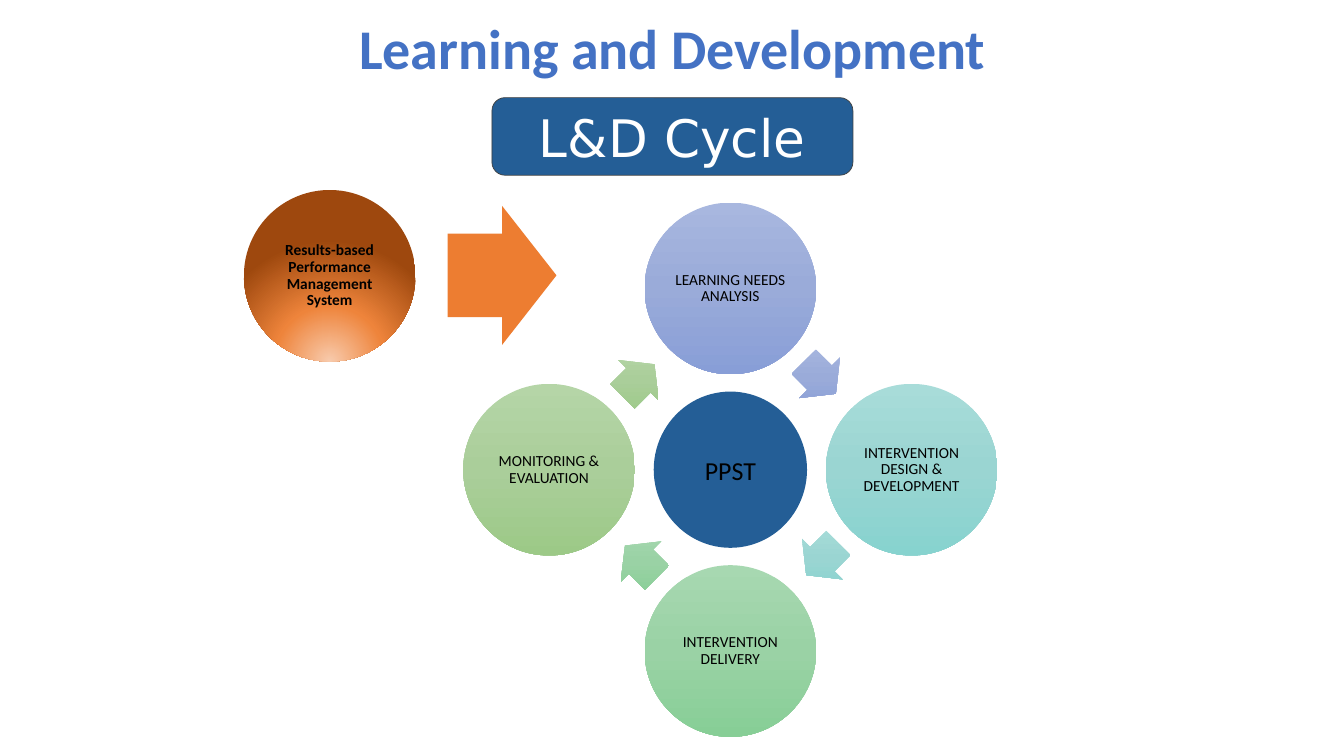
"""Build the Learning and Development cycle slide."""
from dataclasses import dataclass
from math import cos, radians, sin

from lxml import etree
from pptx import Presentation
from pptx.dml.color import RGBColor
from pptx.enum import shapes as es, text as et
from pptx.oxml.ns import qn
from pptx.util import Pt

KIND = es.MSO_SHAPE


@dataclass(frozen=True)
class Theme:
    blue: str = "245E96"
    title: str = "4472C4"
    edge: str = "404040"
    orange: str = "ED7D31"
    rust: tuple = ((0, "F8CBAD"), (46, "EE843B"), (100, "9E480E"))
    black: str = "000000"
    white: str = "FFFFFF"
    sans: str = "Calibri"
    wide: str = "DejaVu Sans"
    huge: float = 40
    big: float = 36.9
    mid: float = 18.5
    small: float = 11


@dataclass(frozen=True)
class Box:
    x: float
    y: float
    w: float
    h: float


@dataclass(frozen=True)
class Step:
    label: str
    tints: tuple


@dataclass(frozen=True)
class Font:
    size: float
    color: str = Theme.black
    face: str = Theme.sans
    bold: bool = False


LOOK = Theme()
STEPS = (
    Step("LEARNING NEEDS ANALYSIS", ("A8B7DF", "9AABD9", "889ED7")),
    Step("INTERVENTION DESIGN & DEVELOPMENT", ("A8DCD9", "9AD5D2", "87D3CF")),
    Step("INTERVENTION DELIVERY", ("A7D8B1", "9AD2A5", "87CE96")),
    Step("MONITORING & EVALUATION", ("B5D5A7", "AACE9A", "9CC987")),
)
HUB_X, HUB_Y = 521.7, 335.5
RING = 129.5
DISC = 122.6
LAG = 0.8


def spot(angle: float, dist: float, w: float, h: float) -> Box:
    turn = radians(angle)
    x, y = HUB_X + dist * sin(turn), HUB_Y - dist * cos(turn)
    return Box(x - w / 2, y - h / 2, w, h)


def place(box: Box) -> tuple:
    return Pt(box.x), Pt(box.y), Pt(box.w), Pt(box.h)


def draw(slide, kind, box: Box, color: str = LOOK.blue):
    shape = slide.shapes.add_shape(kind, *place(box))
    shape.shadow.inherit = False
    shape.fill.solid()
    shape.fill.fore_color.rgb = RGBColor.from_string(color)
    shape.line.fill.background()
    return shape


def blend(shape, stops: tuple, round_fill: bool = False) -> None:
    shape.fill.gradient()
    grad = shape._element.spPr.find(qn("a:gradFill"))
    for child in list(grad):
        grad.remove(child)
    grad.set("rotWithShape", "0")
    group = etree.SubElement(grad, qn("a:gsLst"))
    for pos, color in stops:
        stop = etree.SubElement(group, qn("a:gs"), pos=str(pos * 1000))
        etree.SubElement(stop, qn("a:srgbClr"), val=color)
    if round_fill:
        way = etree.SubElement(grad, qn("a:path"), path="circle")
        etree.SubElement(way, qn("a:fillToRect"),
                         l="50000", t="130000", r="50000", b="-30000")
    else:
        etree.SubElement(grad, qn("a:lin"), ang="5400000", scaled="0")


def write(shape, words: str, font: Font, inset: float = 1.4, lead: float = 1) -> None:
    frame = shape.text_frame
    frame.text = words
    frame.word_wrap = True
    frame.vertical_anchor = et.MSO_ANCHOR.MIDDLE
    frame.margin_left = frame.margin_right = Pt(inset)
    frame.margin_top = frame.margin_bottom = Pt(inset)
    para = frame.paragraphs[0]
    para.alignment = et.PP_ALIGN.CENTER
    para.line_spacing = lead
    run = para.runs[0].font
    run.name, run.size, run.bold = font.face, Pt(font.size), font.bold
    run.color.rgb = RGBColor.from_string(font.color)


def arrow(slide, box: Box, color: str = LOOK.orange):
    shape = draw(slide, KIND.RIGHT_ARROW, box, color)
    shape.adjustments[0] = 0.6
    shape.adjustments[1] = 0.5
    return shape


def cycle(slide) -> None:
    for i, step in enumerate(STEPS):
        stops = tuple(zip((0, 50, 100), step.tints))
        disc = draw(slide, KIND.OVAL, spot(90 * i, RING, DISC, DISC))
        blend(disc, stops)
        write(disc, step.label, Font(LOOK.small), lead=0.9)
        head = arrow(slide, spot(90 * i + 45 - LAG, RING / 2 ** 0.5, 32.4, 41))
        head.rotation = 90 * i + 45
        blend(head, stops)
    hub = draw(slide, KIND.OVAL, spot(0, 0, 109.5, 111.6))
    write(hub, "PPST", Font(LOOK.mid))


def main() -> None:
    deck = Presentation()
    deck.slide_width, deck.slide_height = Pt(960), Pt(540)
    slide = deck.slides.add_slide(deck.slide_layouts[6])

    badge = draw(slide, KIND.ROUNDED_RECTANGLE, Box(351.4, 69.8, 257.8, 55.4))
    badge.line.color.rgb = RGBColor.from_string(LOOK.edge)
    badge.line.width = Pt(0.5)
    write(badge, "L&D Cycle", Font(LOOK.big, LOOK.white, LOOK.wide))

    cycle(slide)

    title = slide.shapes.add_textbox(*place(Box(51.8, 5.8, 856.8, 55.4)))
    write(title, "Learning and Development",
          Font(LOOK.huge, LOOK.title, bold=True), inset=3.6)

    source = draw(slide, KIND.OVAL, Box(174.2, 135.7, DISC, DISC))
    blend(source, LOOK.rust, round_fill=True)
    write(source, "Results-based Performance Management System",
          Font(LOOK.small, bold=True), lead=0.9)
    arrow(slide, Box(319.7, 147, 77.8, 99.4))

    deck.save("out.pptx")


if __name__ == "__main__":
    main()
